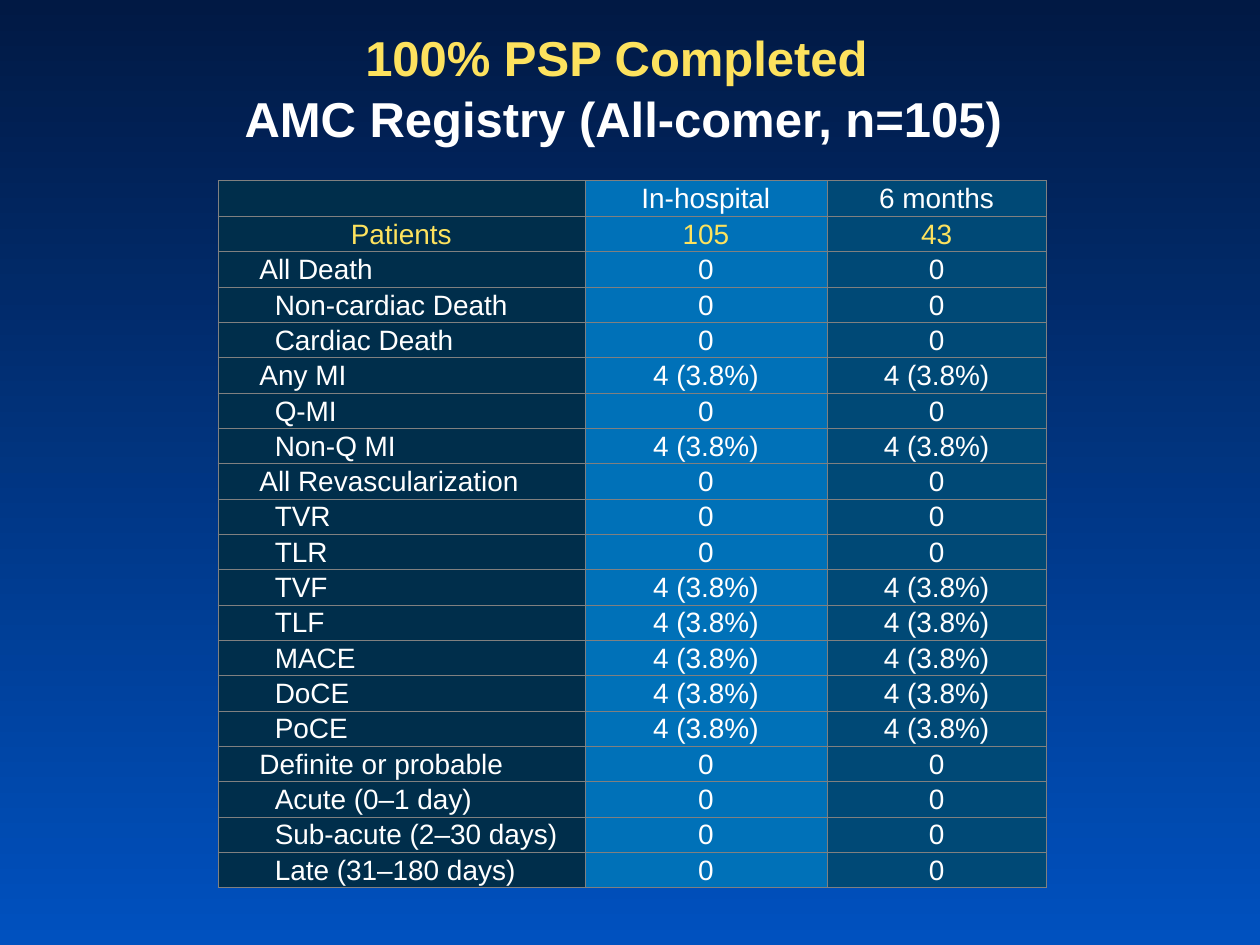
from dataclasses import dataclass

from lxml.etree import SubElement as Sub
from pptx import Presentation as Deck
from pptx.dml.color import RGBColor as Rgb
from pptx.enum.text import MSO_ANCHOR as Anchor, PP_ALIGN as Align
from pptx.oxml.ns import qn
from pptx.util import Cm, Pt


@dataclass(frozen=True)
class Theme:
    font: str = "Arial"
    head: int = 28
    body: int = 16
    white: str = "FFFFFF"
    gold: str = "FDE25E"
    edge: str = "808080"
    sky: tuple = ("011944", "0051BF")
    cols: tuple = ("002E4B", "0071B8", "004976")


theme = Theme()


def write(para, text, size=theme.body, color=theme.white, bold=False, align=Align.CENTER):
    para.alignment = align
    run = para.add_run()
    run.text = text
    font = run.font
    font.name, font.size, font.bold = theme.font, Pt(size), bold
    font.color.rgb = Rgb.from_string(color)


def rule(cell):
    """Draw a thin line on all four sides of a cell."""
    props = cell._tc.get_or_add_tcPr()
    for spot, side in enumerate(("a:lnL", "a:lnR", "a:lnT", "a:lnB")):
        line = Sub(props, qn(side), w=str(Pt(0.25)))
        Sub(Sub(line, qn("a:solidFill")), qn("a:srgbClr"), val=theme.edge)
        props.insert(spot, line)


deck = Deck()
deck.slide_width, deck.slide_height = Cm(25.4), Cm(19.05)
slide = deck.slides.add_slide(deck.slide_layouts[6])

back = slide.background.fill
back.gradient()
back.gradient_angle = 270
for stop, color, spot in zip(back.gradient_stops, theme.sky, (0, 1)):
    stop.color.rgb = Rgb.from_string(color)
    stop.position = spot

# Table: level 0 is a group, level 1 an item of it
none, some = "0", "4 (3.8%)"
rows = [
    (None, "", "In-hospital", "6 months"),
    (None, "Patients", "105", "43"),
    (0, "All Death", none, none),
    (1, "Non-cardiac Death", none, none),
    (1, "Cardiac Death", none, none),
    (0, "Any MI", some, some),
    (1, "Q-MI", none, none),
    (1, "Non-Q MI", some, some),
    (0, "All Revascularization", none, none),
    (1, "TVR", none, none),
    (1, "TLR", none, none),
    (1, "TVF", some, some),
    (1, "TLF", some, some),
    (1, "MACE", some, some),
    (1, "DoCE", some, some),
    (1, "PoCE", some, some),
    (0, "Definite or probable", none, none),
    (1, "Acute (0–1 day)", none, none),
    (1, "Sub-acute (2–30 days)", none, none),
    (1, "Late (31–180 days)", none, none),
]
widths = [Cm(7.4), Cm(4.88), Cm(4.42)]
frame = slide.shapes.add_table(
    len(rows), len(widths), Cm(4.39), Cm(3.64), sum(widths), Cm(14.25))
grid = frame.table
grid.first_row = grid.horz_banding = False
for col, width in zip(grid.columns, widths):
    col.width = width

for y, (level, *texts) in enumerate(rows):
    for x, text in enumerate(texts):
        cell = grid.cell(y, x)
        cell.fill.solid()
        cell.fill.fore_color.rgb = Rgb.from_string(theme.cols[x])
        cell.vertical_anchor = Anchor.MIDDLE
        cell.margin_left = cell.margin_right = cell.margin_top = Cm(0.03)
        cell.margin_bottom = 0
        rule(cell)
        label = x == 0 and level is not None
        if label:
            cell.margin_left = Cm(0.84 + 0.31 * level)
        para = cell.text_frame.paragraphs[0]
        if text:
            write(para, text, color=theme.gold if y == 1 else theme.white,
                  align=Align.LEFT if label else Align.CENTER)
        else:
            Sub(para._p, qn("a:endParaRPr"), sz=str(theme.body * 100))

# Title
box = slide.shapes.add_textbox(0, Cm(0.33), Cm(25.4), Cm(3.84)).text_frame
box.word_wrap = True
box.margin_top = Cm(0.23)
box.margin_right = Cm(0.8)
write(box.paragraphs[0], "100% PSP Completed", size=theme.head, color=theme.gold, bold=True)
para = box.add_paragraph()
para.space_before = Pt(1)
para._p.get_or_add_pPr().set("marL", str(Cm(0.28)))
write(para, "AMC Registry (All-comer, n=105)", size=theme.head, bold=True)

deck.save("out.pptx")
